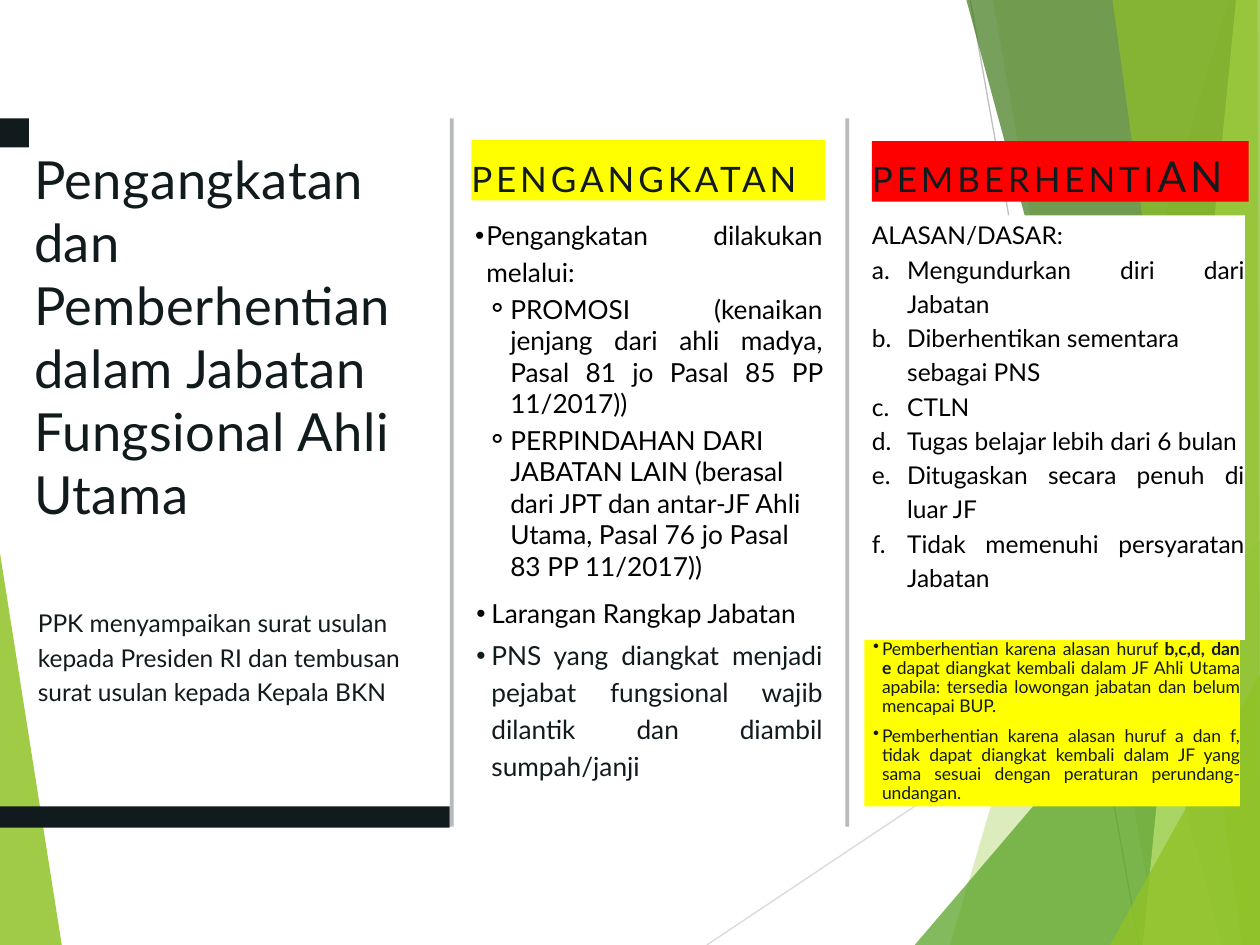
from dataclasses import dataclass

from lxml import etree
from pptx import Presentation
from pptx import util as u
from pptx.dml.color import RGBColor
from pptx.enum import shapes, text
from pptx.oxml.ns import qn


@dataclass(frozen=True)
class Theme:
    """Colours, font and type sizes of the slide."""
    font: str = "Lato"
    ink: str = "111B1E"
    black: str = "000000"
    white: str = "FFFFFF"
    yellow: str = "FFFF00"
    red: str = "FF0000"
    lime: str = "90C226"
    green: str = "54A021"
    forest: str = "3F7819"
    pale: str = "C0E474"
    light_line: str = "D9D9D9"
    mid_line: str = "BFBFBF"
    title: float = 30
    heading: float = 20
    heading_end: float = 24.3
    list: float = 15
    body: float = 14
    note: float = 10


THEME = Theme()


@dataclass
class Line:
    """One paragraph: runs are (text, bold, size) and indent is (left, first)."""
    runs: list
    size: float
    color: str = THEME.ink
    leading: float = 0
    justify: bool = False
    bullet: str = ""
    indent: tuple = (0, 0)
    level: int = 0
    before: float = 0
    after: float = 0
    tracking: float = 0


def plain(words, size, **options):
    """Return a paragraph made of a single run."""
    return Line([(words, None, None)], size, **options)


def paint(shape, color, opacity=100):
    """Fill a shape without outline or shadow."""
    shape.fill.solid()
    shape.fill.fore_color.rgb = RGBColor.from_string(color)
    if opacity < 100:
        source = shape.fill._xPr.find(".//" + qn("a:srgbClr"))
        etree.SubElement(source, qn("a:alpha"), val=str(opacity * 1000))
    shape.line.fill.background()
    shape.shadow.inherit = False


def add_facet(slide, points, color, opacity):
    """Draw one translucent polygon of the backdrop."""
    corners = [(u.Inches(x), u.Inches(y)) for x, y in points]
    builder = slide.shapes.build_freeform(*corners[0])
    builder.add_line_segments(corners[1:], close=True)
    paint(builder.convert_to_shape(), color, opacity)


def add_ray(slide, start, end, color):
    """Draw one thin line of the backdrop."""
    ends = [u.Inches(value) for value in start + end]
    connector = slide.shapes.add_connector(shapes.MSO_CONNECTOR.STRAIGHT, *ends)
    connector.line.color.rgb = RGBColor.from_string(color)
    connector.line.width = u.Pt(0.75)
    etree.SubElement(connector._element.spPr, qn("a:effectLst"))


def add_block(slide, box, color, opacity=100):
    """Draw a filled rectangle."""
    frame = [u.Inches(value) for value in box]
    shape = slide.shapes.add_shape(shapes.MSO_SHAPE.RECTANGLE, *frame)
    paint(shape, color, opacity)
    return shape


def place(slide, placeholder, box):
    """Move a placeholder to its box, above the shapes drawn so far."""
    lengths = [u.Inches(value) for value in box]
    placeholder.left, placeholder.top, placeholder.width, placeholder.height = lengths
    slide.shapes._spTree.append(placeholder._element)
    return placeholder


def set_bullet(paragraph, line):
    """Give a paragraph its bullet or letter and its hanging indent."""
    properties = paragraph._p.get_or_add_pPr()
    left, first = line.indent
    properties.set("marL", str(u.Inches(left)))
    properties.set("indent", str(u.Inches(first)))
    if line.bullet == "a.":
        etree.SubElement(properties, qn("a:buAutoNum"), type="alphaLcPeriod")
    elif line.bullet:
        etree.SubElement(properties, qn("a:buChar"), char=line.bullet)


def write(shape, lines):
    """Fill a shape with paragraphs."""
    frame = shape.text_frame
    frame.word_wrap = True
    frame.auto_size = text.MSO_AUTO_SIZE.NONE
    frame.vertical_anchor = text.MSO_ANCHOR.TOP
    frame.margin_left = frame.margin_right = frame.margin_top = frame.margin_bottom = 0
    for index, line in enumerate(lines):
        paragraph = frame.add_paragraph() if index else frame.paragraphs[0]
        set_bullet(paragraph, line)
        paragraph.level = line.level
        paragraph.alignment = text.PP_ALIGN.JUSTIFY if line.justify else text.PP_ALIGN.LEFT
        paragraph.line_spacing = u.Pt(line.leading) if line.leading else 1.0
        paragraph.space_before = u.Pt(line.before)
        paragraph.space_after = u.Pt(line.after)
        paragraph.font.name = THEME.font
        paragraph.font.size = u.Pt(line.size)
        paragraph.font.color.rgb = RGBColor.from_string(line.color)
        for words, bold, size in line.runs:
            run = paragraph.add_run()
            run.text = words
            if bold:
                run.font.bold = True
            if size:
                run.font.size = u.Pt(size)
            if line.tracking:
                run._r.get_or_add_rPr().set("spc", str(round(line.tracking * 100)))


def add_backdrop(slide):
    """Draw the green facets and thin rays."""
    add_facet(slide, [(0, 4.39), (0.49, 7.5), (0, 7.5)], THEME.lime, 85)
    add_ray(slide, (5.61, 7.5), (10, 4.57), THEME.light_line)
    add_ray(slide, (7.7, 0), (9.04, 7.5), THEME.mid_line)
    right = [(10, 7.5), (10, 0)]
    add_facet(slide, [(9.75, 0), (7.54, 7.5)] + right, THEME.lime, 30)
    add_facet(slide, [(7.88, 0), (9.19, 7.5)] + right, THEME.lime, 20)
    add_facet(slide, [(7.26, 7.5), (10, 4.29), (10, 7.5)], THEME.green, 72)
    add_facet(slide, [(7.67, 0), (9.7, 7.5)] + right, THEME.forest, 70)
    add_facet(slide, [(9.81, 0), (9.07, 7.5)] + right, THEME.pale, 70)
    add_facet(slide, [(8.83, 0), (9.86, 7.5), (10, 7.5), (9.98, 0)], THEME.lime, 65)
    add_facet(slide, [(8.81, 7.5), (10, 5.35), (10, 7.5)], THEME.lime, 80)


def add_summary(slide):
    """Write the title and the note below it."""
    title = place(slide, slide.shapes.title, (0.27, 1.17, 3.06, 3.03))
    write(title, [plain("Pengangkatan dan Pemberhentian dalam Jabatan Fungsional Ahli Utama",
                        THEME.title, leading=36, tracking=0.3)])
    box = [u.Inches(value) for value in (0.3, 4.79, 2.99, 0.84)]
    write(slide.shapes.add_textbox(*box), [plain(
        "PPK menyampaikan surat usulan kepada Presiden RI dan tembusan surat usulan "
        "kepada Kepala BKN", THEME.body, leading=19.6)])


def add_heading(slide, box, color, runs):
    """Write a spaced column heading on a coloured band."""
    write(add_block(slide, box, color),
          [Line(runs, THEME.heading, leading=34, tracking=2.2)])


def add_appointment(slide):
    """Write the middle column."""
    add_heading(slide, (3.74, 1.11, 2.81, 0.48), THEME.yellow, [("PENGANGKATAN", None, None)])
    body = place(slide, slide.placeholders[1], (3.74, 1.7, 2.79, 4.54))
    paint(body, THEME.white)
    outer = dict(size=THEME.list, level=1, bullet="•", leading=21, justify=True)
    inner = dict(size=THEME.list, level=2, bullet="⚬", indent=(0.31, -0.19),
                 color=THEME.black, after=3)
    wide = dict(outer, indent=(0.16, -0.12))
    write(body, [
        plain("Pengangkatan dilakukan melalui:", indent=(0.12, -0.09), color=THEME.black, **outer),
        plain("PROMOSI (kenaikan jenjang dari ahli madya, Pasal 81 jo Pasal 85 PP 11/2017))",
              justify=True, before=3, **inner),
        plain("PERPINDAHAN DARI JABATAN LAIN (berasal dari JPT dan antar-JF Ahli Utama, "
              "Pasal 76 jo Pasal 83 PP 11/2017))", **inner),
        plain("Larangan Rangkap Jabatan", color=THEME.black, before=3, after=3, **wide),
        plain("PNS yang diangkat menjadi pejabat fungsional wajib dilantik dan diambil "
              "sumpah/janji", **wide),
    ])


def add_dismissal(slide):
    """Write the right column."""
    note = dict(size=THEME.note, level=1, bullet="•", indent=(0.14, -0.07), leading=10.9,
                justify=True, before=3, after=3)
    write(add_block(slide, (6.86, 5.08, 2.98, 1.32), THEME.yellow), [
        Line([("Pemberhentian karena alasan huruf ", None, None), ("b,c,d, dan e ", True, None),
              ("dapat diangkat kembali dalam JF Ahli Utama apabila: tersedia lowongan "
               "jabatan dan belum mencapai BUP.", None, None)], **note),
        plain("Pemberhentian karena alasan huruf a dan f, tidak dapat diangkat kembali dalam JF "
              "yang sama sesuai dengan peraturan perundang-undangan.", **note),
    ])
    add_heading(slide, (6.92, 1.12, 2.99, 0.48), THEME.red,
                [("PEMBERHENTI", None, None), ("AN", None, THEME.heading_end)])
    style = dict(size=THEME.body, color=THEME.black, leading=19.6)
    reasons = ["Mengundurkan diri dari Jabatan", "Diberhentikan sementara sebagai PNS", "CTLN",
               "Tugas belajar lebih dari 6 bulan", "Ditugaskan secara penuh di luar JF",
               "Tidak memenuhi persyaratan Jabatan"]
    lines = [plain(reason, bullet="a.", indent=(0.28, -0.28), justify=index != 1, **style)
             for index, reason in enumerate(reasons)]
    write(add_block(slide, (6.92, 1.71, 2.96, 3.37), THEME.white),
          [plain("ALASAN/DASAR:", justify=True, **style)] + lines)


def main():
    """Build and save the slide."""
    presentation = Presentation()
    presentation.slide_width, presentation.slide_height = u.Inches(10), u.Inches(7.5)
    slide = presentation.slides.add_slide(presentation.slide_layouts[1])
    add_backdrop(slide)
    add_summary(slide)
    add_appointment(slide)
    add_dismissal(slide)
    add_block(slide, (0, 6.4, 3.57, 0.17), THEME.ink)
    add_block(slide, (0, 0.94, 0.23, 0.23), THEME.ink)
    for left in (3.57, 6.71):
        add_block(slide, (left, 0.94, 0.03, 5.62), THEME.ink, 30)
    presentation.save("out.pptx")


if __name__ == "__main__":
    main()
